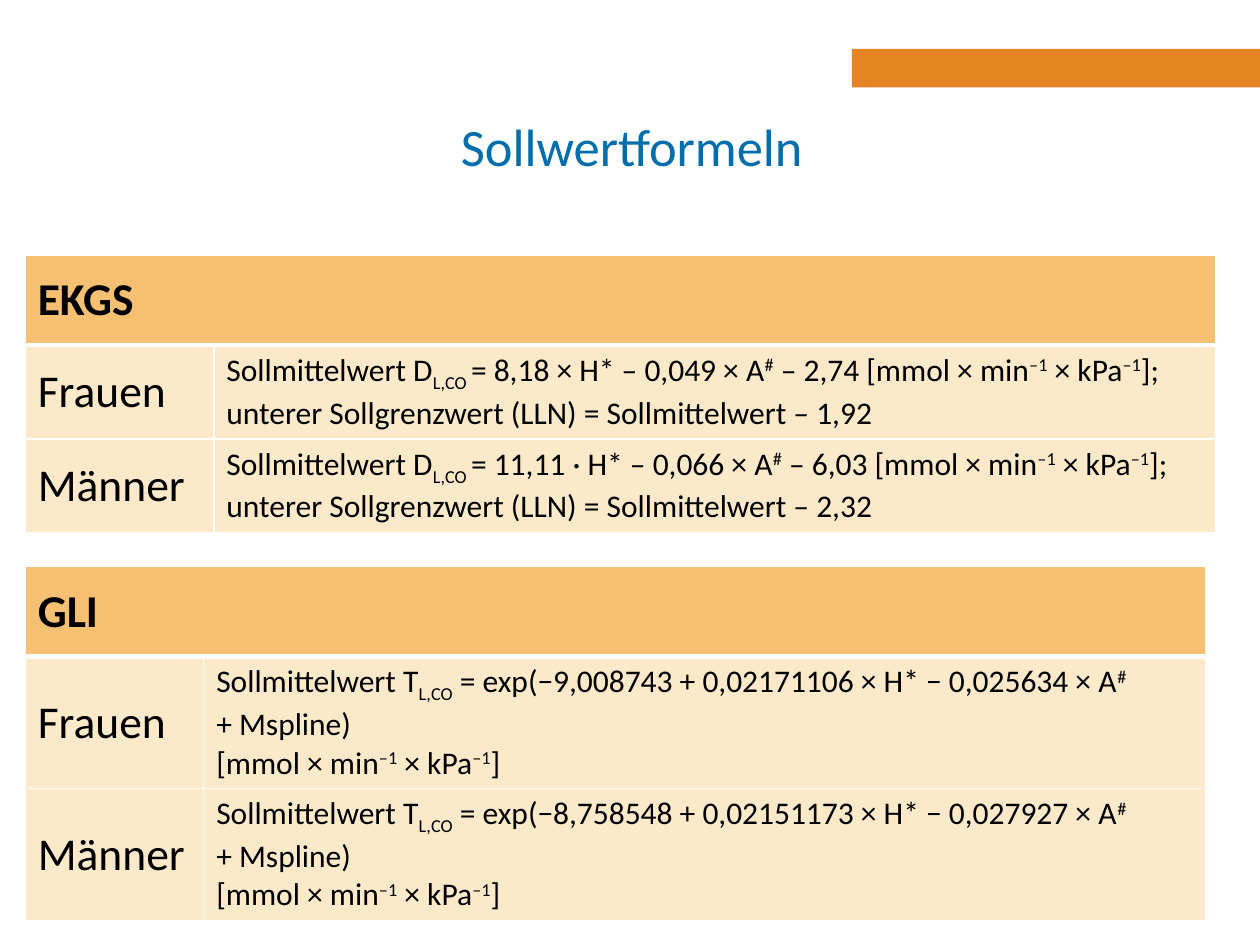
from lxml.etree import SubElement
from pptx import Presentation
from pptx.dml.color import RGBColor
from pptx.enum.shapes import MSO_SHAPE
from pptx.enum.text import MSO_ANCHOR, PP_ALIGN
from pptx.oxml.ns import qn
from pptx.util import Pt

COLORS = {"bar": "E68323", "title": "006EAC", "head": "F5C071",
          "body": "FBE9C9", "rule": "FFFFFF", "text": "000000"}
UNIT = "[mmol × min|^–1| × kPa|^–1|]"
SHIFT = {"_": "-25000", "^": "30000"}


def ekgs(term, age, const, limit):
    return [f"Sollmittelwert D|_L,CO |= {term} H* – {age} × A|^#| – {const} {UNIT};",
            f"unterer Sollgrenzwert (LLN) = Sollmittelwert – {limit}"]


def gli(const, height, age):
    return [f"Sollmittelwert T|_L,CO| = exp(−{const} + {height} × H* − {age} × A|^#",
            "+ Mspline)", UNIT]


TABLES = [
    {"name": "EKGS", "top": 145.8, "label": 107.8, "row": 53.6,
     "women": ekgs("8,18 ×", "0,049", "2,74", "1,92"),
     "men": ekgs("11,11 ·", "0,066", "6,03", "2,32")},
    {"name": "GLI", "top": 323.8, "label": 102, "row": 75.4,
     "women": gli("9,008743", "0,02171106", "0,025634"),
     "men": gli("8,758548", "0,02151173", "0,027927")},
]
LEFT, WIDE, HEAD = 14.4, 572.4, 51.4


def color(name):
    return RGBColor.from_string(COLORS[name])


def paint(shape, name):
    shape.fill.solid()
    shape.fill.fore_color.rgb = color(name)


def write(frame, lines, tint="text", align=PP_ALIGN.LEFT, **style):
    for i, line in enumerate(lines):
        para = frame.paragraphs[0] if i == 0 else frame.add_paragraph()
        para.alignment = align
        for part in line.split("|"):
            run = para.add_run()
            run.text = part.lstrip("_^")
            for key, value in {"name": "Calibri", **style}.items():
                setattr(run.font, key, value)
            run.font.color.rgb = color(tint)
            if part[0] in SHIFT:
                run._r.get_or_add_rPr().set("baseline", SHIFT[part[0]])


def border(cell, base):
    props = cell._tc.get_or_add_tcPr()
    for side, width in zip("LRTB", (1, 1, 1, base)):
        line = SubElement(props, qn(f"a:ln{side}"), w=str(Pt(width)))
        fill = SubElement(line, qn("a:solidFill"))
        SubElement(fill, qn("a:srgbClr"), val=COLORS["rule"])


def build(slide, data):
    widths = (data["label"], WIDE)
    heights = (HEAD, data["row"], data["row"])
    table = slide.shapes.add_table(3, 2, Pt(LEFT), Pt(data["top"]),
                                   Pt(sum(widths)), Pt(sum(heights))).table
    for col, width in zip(table.columns, widths):
        col.width = Pt(width)
    for r, height in enumerate(heights):
        table.rows[r].height = Pt(height)
        for cell in table.rows[r].cells:
            border(cell, 1 if r else 3)
            paint(cell, "body" if r else "head")
            cell.vertical_anchor = MSO_ANCHOR.MIDDLE
    table.cell(0, 0).merge(table.cell(0, 1))
    write(table.cell(0, 0).text_frame, [data["name"]], size=Pt(26), bold=True)
    for r, (label, key) in enumerate((("Frauen", "women"), ("Männer", "men")), 1):
        write(table.cell(r, 0).text_frame, [label], size=Pt(26), bold=False)
        write(table.cell(r, 1).text_frame, data[key], size=Pt(18), bold=False)


def main():
    deck = Presentation()
    deck.slide_width, deck.slide_height = Pt(720), Pt(540)
    slide = deck.slides.add_slide(deck.slide_layouts[6])
    bar = slide.shapes.add_shape(MSO_SHAPE.RECTANGLE, Pt(486.8), Pt(28),
                                 Pt(233.2), Pt(22))
    bar.shadow.inherit = False
    paint(bar, "bar")
    bar.line.fill.background()
    frame = slide.shapes.add_textbox(Pt(106.6), Pt(49.8), Pt(509), Pt(67)).text_frame
    frame.word_wrap = True
    frame.vertical_anchor = MSO_ANCHOR.MIDDLE
    write(frame, ["Sollwertformeln"], "title", PP_ALIGN.CENTER, size=Pt(30))
    for data in TABLES:
        build(slide, data)
    deck.save("out.pptx")


if __name__ == "__main__":
    main()
